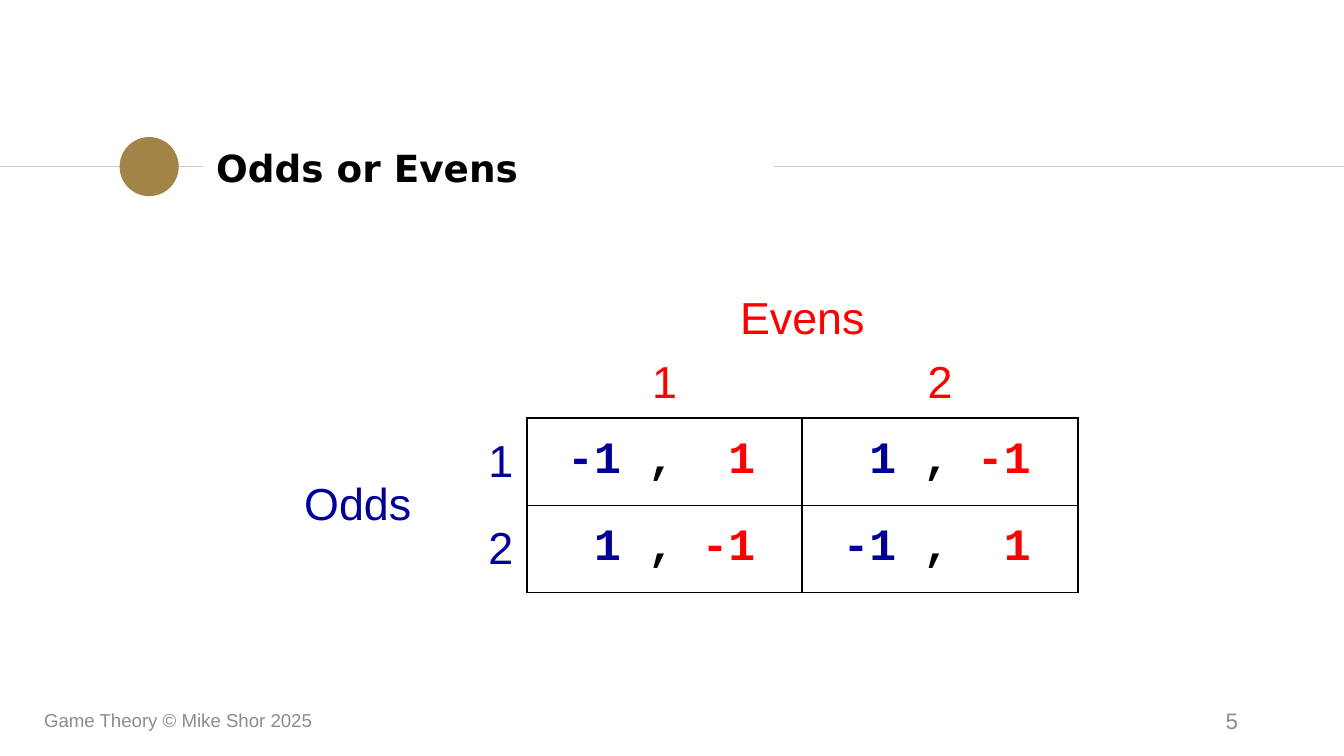
import pptx
import pptx.util
from pptx.dml.color import RGBColor
from pptx.enum.shapes import MSO_CONNECTOR, MSO_SHAPE
from pptx.enum.text import MSO_ANCHOR, PP_ALIGN
from pptx.oxml import parse_xml
from pptx.oxml.ns import nsdecls
from pptx.util import Inches, Pt


class Theme:
    black = RGBColor.from_string("000000")
    odds = RGBColor.from_string("000099")
    evens = RGBColor.from_string("FF0000")
    gold = RGBColor.from_string("A28448")
    rule = RGBColor.from_string("CCCCCC")
    grey = RGBColor.from_string("8C8C8C")
    sans, mono, head = "Arial", "Courier New", "DejaVu Sans"
    title, game, page, note = Pt(20), Pt(24), Pt(12), Pt(10)


def style(para, face, size, color, align=PP_ALIGN.LEFT, bold=False):
    para.alignment = align
    font = para.font
    font.name, font.size, font.bold = face, size, bold
    if color is not None:
        font.color.rgb = color


def border(cell, edges):
    """Draw black 1 pt lines on the named edges, given in L, R, T, B order."""
    props = cell._tc.get_or_add_tcPr()
    for spot, edge in enumerate(edges):
        props.insert(spot, parse_xml(
            f'<a:ln{edge} {nsdecls("a")} w="12700"><a:solidFill>'
            f'<a:srgbClr val="{Theme.black}"/></a:solidFill></a:ln{edge}>'))


deck = pptx.Presentation()
deck.slide_width = Inches(10)
deck.slide_height = deck.slide_width * 9 // 16
slide = deck.slides.add_slide(deck.slide_layouts[6])
shapes = slide.shapes

# Title band: rules on both sides and a gold dot
for start, end in ((0, 1.51), (5.76, 10)):
    line = shapes.add_connector(MSO_CONNECTOR.STRAIGHT, Inches(start), Inches(1.24),
                                Inches(end), Inches(1.24))
    line.line.color.rgb = Theme.rule
    line.line.width = Pt(0.75)
    line._element.spPr.append(parse_xml(f'<a:effectLst {nsdecls("a")}/>'))

dot = shapes.add_shape(MSO_SHAPE.OVAL, Inches(0.89), Inches(1.02), Inches(0.44), Inches(0.44))
dot.shadow.inherit = False
dot.fill.solid()
dot.fill.fore_color.rgb = Theme.gold
dot.line.fill.background()

# Payoff table
widths = (1.5, 0.76, 2.05, 2.05)
heights = (0.63, 0.5, 0.65, 0.65)
frame = shapes.add_table(4, 4, Inches(1.66), Inches(1.98),
                         Inches(sum(widths)), Inches(sum(heights)))
table = frame.table
table.first_row = table.horz_banding = False
for col, width in zip(table.columns, widths):
    col.width = Inches(width)
for row, height in zip(table.rows, heights):
    row.height = Inches(height)
for cell in table.iter_cells():
    cell.fill.background()

table.cell(0, 2).merge(table.cell(0, 3))
table.cell(2, 0).merge(table.cell(3, 0))

top, mid, low = MSO_ANCHOR.TOP, MSO_ANCHOR.MIDDLE, MSO_ANCHOR.BOTTOM
labels = (
    (0, 2, "Evens", Theme.evens, PP_ALIGN.CENTER, low),
    (1, 2, "1", Theme.evens, PP_ALIGN.CENTER, top),
    (1, 3, "2", Theme.evens, PP_ALIGN.CENTER, top),
    (2, 0, "Odds", Theme.odds, PP_ALIGN.RIGHT, mid),
    (2, 1, "1", Theme.odds, PP_ALIGN.RIGHT, mid),
    (3, 1, "2", Theme.odds, PP_ALIGN.RIGHT, mid),
)
for row, col, text, color, align, anchor in labels:
    cell = table.cell(row, col)
    cell.text = text
    cell.vertical_anchor = anchor
    style(cell.text_frame.paragraphs[0], Theme.sans, Theme.game, color, align)
    if row == 1:
        border(cell, "B")
    elif col == 1:
        border(cell, "R")

# Zero-sum game: Odds loses one point when the numbers match
for row in (2, 3):
    for col in (2, 3):
        odds = -1 if row == col else 1
        cell = table.cell(row, col)
        cell.vertical_anchor = mid
        cell.margin_right = Inches(0.35)
        para = cell.text_frame.paragraphs[0]
        style(para, Theme.mono, Theme.game, None, PP_ALIGN.RIGHT, True)
        for text, color in ((f"{odds}", Theme.odds), (" , ", Theme.black),
                            (f"{-odds:2}", Theme.evens)):
            run = para.add_run()
            run.text = text
            run.font.color.rgb = color
        border(cell, "LRTB")

# Title and footer
texts = (
    ("Odds or Evens", (1.51, 1.01, 4.24, 0.48), Theme.head, Theme.title,
     Theme.black, PP_ALIGN.LEFT, True),
    ("Game Theory © Mike Shor 2025", (0.23, 5.21, 3.38, 0.3), Theme.sans, Theme.note,
     Theme.grey, PP_ALIGN.LEFT, False),
    ("5", (7.06, 5.21, 2.25, 0.3), Theme.sans, Theme.page,
     Theme.grey, PP_ALIGN.RIGHT, False),
)
for text, place, *look in texts:
    box = shapes.add_textbox(*map(Inches, place)).text_frame
    box.word_wrap = True
    box.vertical_anchor = mid
    box.text = text
    style(box.paragraphs[0], *look)

deck.save("out.pptx")
